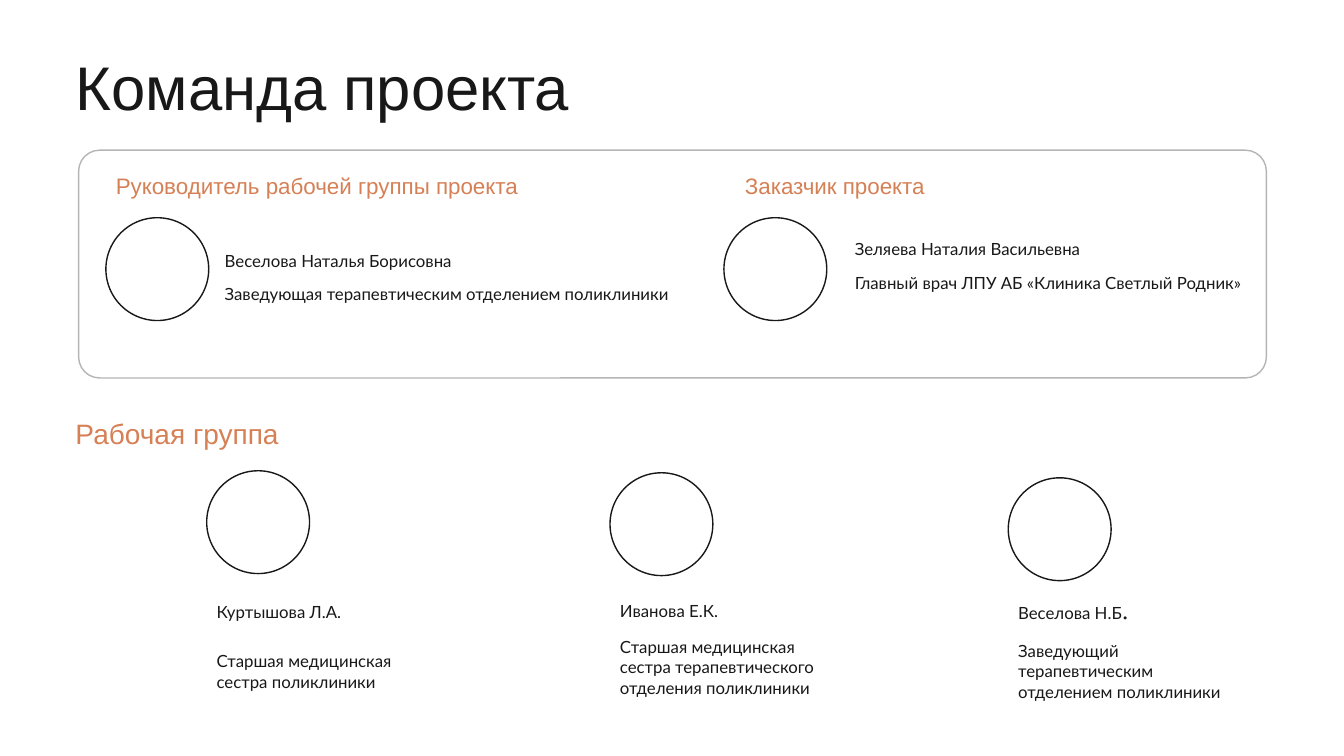
from dataclasses import dataclass

from pptx import Presentation
from pptx.dml.color import RGBColor
from pptx.enum.shapes import MSO_SHAPE as Kind
from pptx.enum.text import MSO_ANCHOR as Anchor, MSO_AUTO_SIZE as Fit, PP_ALIGN as Align
from pptx.util import Pt

PX = 9144  # EMU, 100 px to the inch


@dataclass(frozen=True)
class Theme:
    ink: str = "181818"
    accent: str = "D58055"
    frame: str = "B5B5B5"
    head: str = "Arial"
    body: str = "Lato"
    dot: str = "Times New Roman"
    title: int = 44
    group: int = 20
    role: int = 16
    text: int = 12
    mark: int = 18


THEME = Theme()
SIZE = 102  # avatar diameter

# Offset in the panel, role, its shift and width, then lines (text, x, y, width, spacing)
LEADS = [
    (0, "Руководитель рабочей группы проекта", 0, 538,
     [("Веселова Наталья Борисовна", 108, 78, 261, 1),
      ("Заведующая терапевтическим отделением поликлиники", 108, 108, 466, 1.15)]),
    (613, "Заказчик проекта", 11, 309,
     [("Зеляева Наталия Васильевна", 120, 66, 250, 1),
      ("Главный врач ЛПУ АБ «Клиника Светлый Родник»", 120, 100, 426, 1)]),
]

# Offset from the heading, name top, job top, name spacing, name, job
CREW = [
    (140, 59, 122, 174, 1.15, "Куртышова Л.А.",
     "Старшая медицинская сестра поликлиники"),
    (540, 61, 122, 158, 1, "Иванова Е.К.",
     "Старшая медицинская сестра терапевтического отделения поликлиники"),
    (935, 66, 111, 157, 1, "Веселова Н.Б.",
     "Заведующий терапевтическим отделением поликлиники"),
]


def px(*nums):
    return [n * PX for n in nums]


def style(run, size, color, font):
    run.font.size = Pt(size)
    run.font.color.rgb = RGBColor.from_string(color)
    run.font.name = font


def text(slide, box, words, size=THEME.text, color=THEME.ink, font=THEME.body, space=1):
    frame = slide.shapes.add_textbox(*px(*box)).text_frame
    frame.word_wrap = True
    frame.auto_size = Fit.SHAPE_TO_FIT_TEXT
    para = frame.paragraphs[0]
    para.text = words
    para.line_spacing = space
    style(para.runs[0], size, color, font)
    return para


def outline(slide, kind, box, color):
    shape = slide.shapes.add_shape(kind, *px(*box))
    shape.shadow.inherit = False
    shape.fill.background()
    shape.line.color.rgb = RGBColor.from_string(color)
    shape.line.width = Pt(1)
    return shape


def avatar(slide, x, y):
    outline(slide, Kind.OVAL, (x, y, SIZE, SIZE), THEME.ink)


def title(slide, box, words):
    shape = slide.shapes.title
    shape.left, shape.top, shape.width, shape.height = px(*box)
    frame = shape.text_frame
    frame.text = words
    frame.auto_size = Fit.NONE
    frame.vertical_anchor = Anchor.MIDDLE
    para = frame.paragraphs[0]
    para.alignment = Align.LEFT
    para.line_spacing = 0.9
    style(para.runs[0], THEME.title, THEME.ink, THEME.head)


def leads(slide, box):
    """Draw the framed panel with the project lead and the client."""
    left, top, _, _ = box
    panel = outline(slide, Kind.ROUNDED_RECTANGLE, box, THEME.frame)
    panel.adjustments[0] = 0.092
    for dx, role, shift, wide, lines in LEADS:
        x, y = left + 27 + dx, top + 17
        text(slide, (x + shift, y, wide, 37), role, THEME.role, THEME.accent, THEME.head)
        avatar(slide, x, y + 50)
        for words, across, down, width, space in lines:
            text(slide, (x + across, y + down, width, 30), words, space=space)


def member(slide, box, tops, space, name, job):
    """Draw one avatar with name and job; tops holds their two offsets."""
    x, y, wide = box
    avatar(slide, x, y)
    para = text(slide, (x, y + tops[0], wide, 31), name, space=space)
    text(slide, (x, y + tops[1], 229, 71), job)
    return para


def crew(slide, box):
    left, top, _, _ = box
    text(slide, box, "Рабочая группа", THEME.group, THEME.accent, THEME.head)
    for dx, dy, high, low, space, name, job in CREW:
        para = member(slide, (left + dx, top + dy, 250), (high, low), space, name, job)
    # The last name ends in a larger serif full stop
    para.runs[0].text = name[:-1]
    stop = para.add_run()
    stop.text = name[-1]
    style(stop, THEME.mark, THEME.ink, THEME.dot)


def main():
    deck = Presentation()
    deck.slide_width, deck.slide_height = px(1333, 750)
    slide = deck.slides.add_slide(deck.slide_layouts[5])
    title(slide, (65, 50, 1267, 79), "Команда проекта")
    leads(slide, (78, 149, 1178, 226))
    crew(slide, (65, 408, 309, 44))
    deck.save("out.pptx")


if __name__ == "__main__":
    main()
